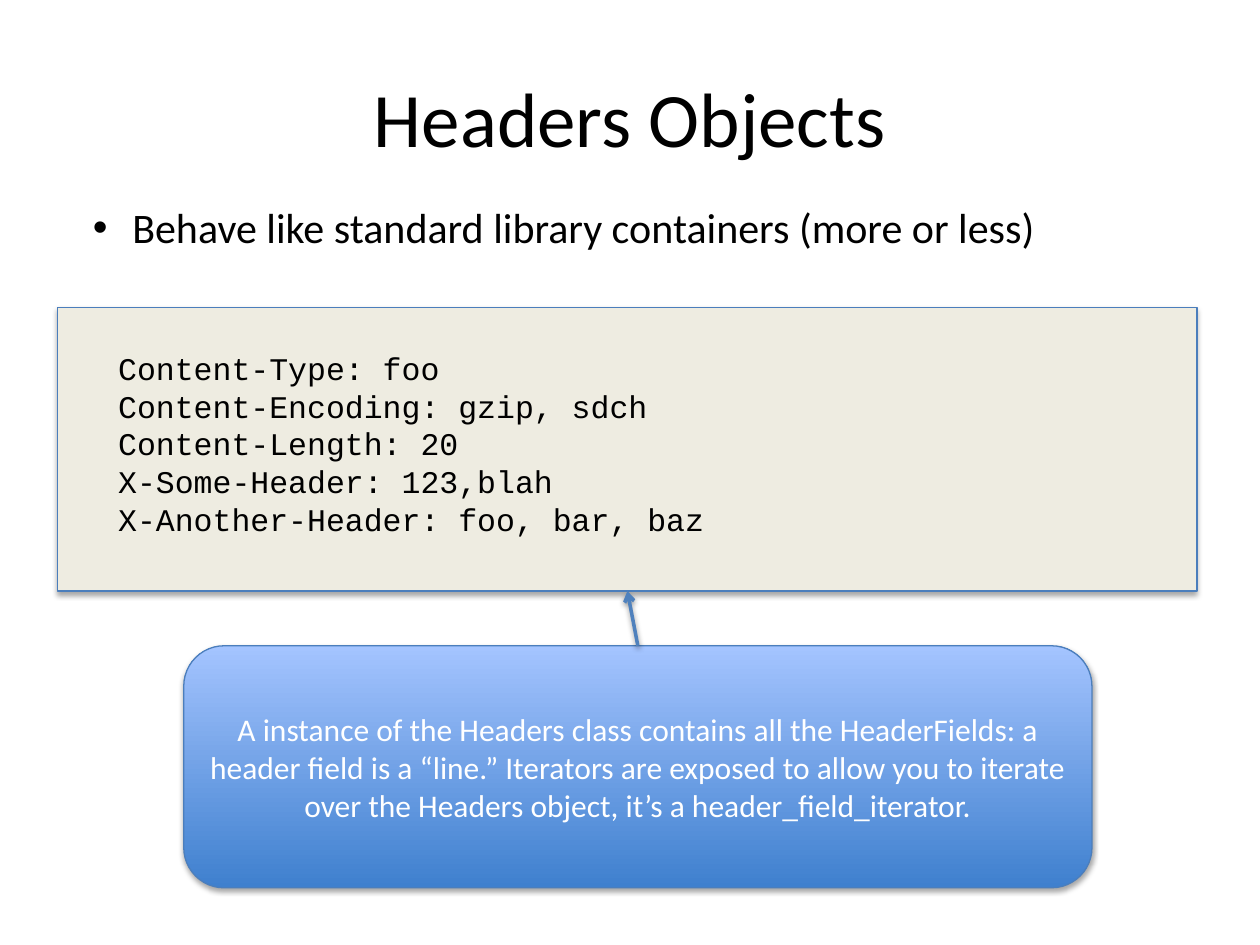
from dataclasses import dataclass

from lxml import etree
from pptx import Presentation
from pptx.dml.color import RGBColor
from pptx.enum.shapes import MSO_CONNECTOR, MSO_SHAPE
from pptx.enum.text import MSO_ANCHOR, MSO_AUTO_SIZE, PP_ALIGN
from pptx.oxml.ns import qn
from pptx.util import Pt

RECTANGLE, ROUNDED = MSO_SHAPE.RECTANGLE, MSO_SHAPE.ROUNDED_RECTANGLE
STRAIGHT = MSO_CONNECTOR.STRAIGHT
TOP, MIDDLE = MSO_ANCHOR.TOP, MSO_ANCHOR.MIDDLE
LEFT, CENTER = PP_ALIGN.LEFT, PP_ALIGN.CENTER
GROW, FIXED = MSO_AUTO_SIZE.SHAPE_TO_FIT_TEXT, MSO_AUTO_SIZE.NONE
TOP_SIDE, BOTTOM_SIDE = 0, 2

COLORS = {
    "text": "000000",
    "light_text": "FFFFFF",
    "panel": "EEECE1",
    "outline": "4B7EBC",
    "arrow": "4F81BD",
    "callout_bottom": "3F80CE",
    "callout_top": "A4C4FF",
    "shadow": "000000",
}


@dataclass
class Area:
    left: float
    top: float
    width: float
    height: float

    def lengths(self) -> tuple:
        return tuple(Pt(v) for v in (self.left, self.top, self.width, self.height))


@dataclass
class TextStyle:
    size: float
    font: str = "Calibri"
    color: str = "text"
    align: int = LEFT
    anchor: int = TOP


def rgb(name: str) -> RGBColor:
    return RGBColor.from_string(COLORS[name])


def write(frame, lines: list[str], style: TextStyle) -> None:
    """Fill a text frame with one paragraph per line."""
    frame.word_wrap = True
    frame.vertical_anchor = style.anchor
    for index, line in enumerate(lines):
        para = frame.paragraphs[0] if index == 0 else frame.add_paragraph()
        para.text = line
        para.alignment = style.align
        para.font.size = Pt(style.size)
        para.font.name = style.font
        para.font.color.rgb = rgb(style.color)


def add_text(page, area: Area, lines: list[str], style: TextStyle, auto_size=GROW):
    box = page.shapes.add_textbox(*area.lengths())
    write(box.text_frame, lines, style)
    box.text_frame.auto_size = auto_size
    return box


def add_shadow(properties, alpha: int, blur: float, distance: float) -> None:
    """Give shape properties a soft shadow that falls straight down."""
    effects = properties.find(qn("a:effectLst"))
    if effects is None:
        effects = etree.SubElement(properties, qn("a:effectLst"))
    shadow = etree.SubElement(
        effects, qn("a:outerShdw"), blurRad=str(Pt(blur)), dist=str(Pt(distance)),
        dir="5400000", rotWithShape="0")
    color = etree.SubElement(shadow, qn("a:srgbClr"), val=COLORS["shadow"])
    etree.SubElement(color, qn("a:alpha"), val=str(alpha * 1000))


def add_panel(page, preset: int, area: Area, fills: list[str]):
    """Draw an outlined, shadowed shape; two fills run from bottom to top."""
    panel = page.shapes.add_shape(preset, *area.lengths())
    if len(fills) == 1:
        panel.fill.solid()
        panel.fill.fore_color.rgb = rgb(fills[0])
    else:
        panel.fill.gradient()
        panel.fill.gradient_angle = 90
        for stop, name in zip(panel.fill.gradient_stops, fills):
            stop.color.rgb = rgb(name)
    panel.line.color.rgb = rgb("outline")
    panel.line.width = Pt(0.75)
    panel.shadow.inherit = False
    add_shadow(panel._element.spPr, 35, 3.1, 1.8)
    return panel


def add_arrow(page, source, target) -> None:
    """Point from the top of the source to the bottom of the target."""
    arrow = page.shapes.add_connector(STRAIGHT, 0, 0, 0, 0)
    arrow.begin_connect(source, TOP_SIDE)
    arrow.end_connect(target, BOTTOM_SIDE)
    arrow.line.color.rgb = rgb("arrow")
    arrow.line.width = Pt(2)
    etree.SubElement(arrow.line._get_or_add_ln(), qn("a:tailEnd"), type="arrow")
    add_shadow(arrow._element.spPr, 38, 3.1, 1.6)


def add_bullet(para, indent: float) -> None:
    properties = para._p.get_or_add_pPr()
    properties.set("marL", str(Pt(indent)))
    properties.set("indent", str(-Pt(indent)))
    etree.SubElement(properties, qn("a:buFont"), typeface="Arial")
    etree.SubElement(properties, qn("a:buChar"), char="•")


def main() -> None:
    deck = Presentation()
    deck.slide_width, deck.slide_height = Pt(720), Pt(540)
    page = deck.slides.add_slide(deck.slide_layouts[6])

    # Title
    add_text(page, Area(36, 21.6, 648, 90), ["Headers Objects"],
             TextStyle(44, align=CENTER, anchor=MIDDLE), FIXED)

    # Key point
    point = add_text(page, Area(46, 111.6, 561, 36),
                     ["Behave like standard library containers (more or less)"],
                     TextStyle(24))
    point.text_frame.word_wrap = False
    add_bullet(point.text_frame.paragraphs[0], 22.5)

    # Header listing
    listing = add_panel(page, RECTANGLE, Area(33, 175.7, 651, 162), ["panel"])
    add_text(page, Area(60.4, 195.8, 351.4, 116.6), [
        "Content-Type: foo",
        "Content-Encoding: gzip, sdch",
        "Content-Length: 20",
        "X-Some-Header: 123,blah",
        "X-Another-Header: foo, bar, baz",
    ], TextStyle(18, font="Courier New"))

    # Explanation with its arrow
    callout = add_panel(page, ROUNDED, Area(105, 369, 519, 138.3),
                        ["callout_bottom", "callout_top"])
    write(callout.text_frame, [
        "A instance of the Headers class contains all the HeaderFields: a header "
        "field is a “line.” Iterators are exposed to allow you to iterate over "
        "the Headers object, it’s a header_field_iterator."
    ], TextStyle(18, color="light_text", align=CENTER, anchor=MIDDLE))
    add_arrow(page, callout, listing)

    deck.save("out.pptx")


if __name__ == "__main__":
    main()
